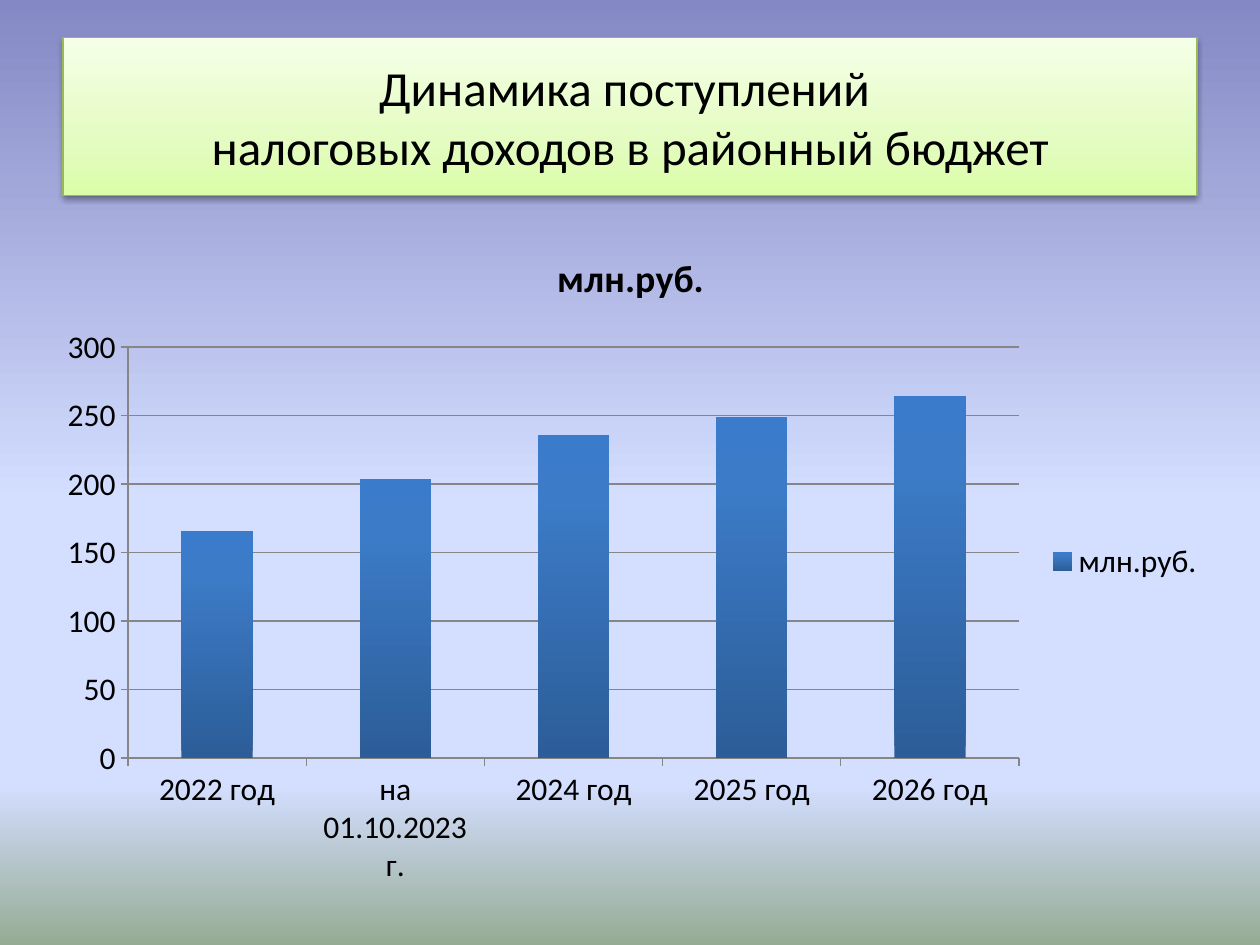
from lxml import etree
from pptx import Presentation
from pptx import util as u
from pptx.chart import data
from pptx.dml import color
from pptx.enum import chart as ch, shapes, text
from pptx.oxml import ns

TITLE = "Динамика поступлений \vналоговых доходов в районный бюджет"
UNIT = "млн.руб."
REVENUE = {
    "2022 год": 166,
    "на 01.10.2023 г.": 204,
    "2024 год": 236,
    "2025 год": 249,
    "2026 год": 264,
}
BOXES = {"title": (1.27, 0.76, 22.86, 3.18), "chart": (0.89, 4.52, 23.65, 13.59)}
THEME = {
    "font": "Calibri",
    "text": "000000",
    "grid": "868686",
    "border": "98B955",
    "title_size": 28,
    "chart_size": 18,
    "unit_size": 21.6,
    "background": ([(0, "8488C4"), (53, "D4DEFF"), (83, "D4DEFF"), (100, "96AB94")], 270),
    "banner": ([(0, "DAFDA7"), (35, "E4FCC2"), (100, "F5FFE7")], 90),
    "bars": ([(0, "2C5D98"), (80, "3C7BC7"), (100, "3A7CCB")], 90),
}


def rgb(name):
    return color.RGBColor.from_string(THEME[name])


def set_font(font, size, **extra):
    font.color.rgb = rgb("text")
    values = {"name": THEME["font"], "size": u.Pt(THEME[size]), **extra}
    for key, value in values.items():
        setattr(font, key, value)


def set_gradient(fill, root, name):
    stops, angle = THEME[name]
    fill.gradient()
    fill.gradient_angle = angle
    holder = next(root.iter(ns.qn("a:gsLst")))
    for old in list(holder):
        holder.remove(old)
    for pos, value in stops:
        gs = etree.SubElement(holder, ns.qn("a:gs"), pos=str(pos * 1000))
        etree.SubElement(gs, ns.qn("a:srgbClr"), val=value)


def add_shadow(sp):
    sp.shadow.inherit = False
    effects = next(sp.element.iter(ns.qn("a:effectLst")))
    shadow = etree.SubElement(
        effects, ns.qn("a:outerShdw"), blurRad=str(u.Pt(3.1)),
        dist=str(u.Pt(1.6)), dir="5400000", rotWithShape="0",
    )
    tint = etree.SubElement(shadow, ns.qn("a:srgbClr"), val=THEME["text"])
    etree.SubElement(tint, ns.qn("a:alpha"), val="38000")


def add_banner(s):
    sp = s.shapes.add_shape(shapes.MSO_SHAPE.RECTANGLE, *map(u.Cm, BOXES["title"]))
    set_gradient(sp.fill, sp.element, "banner")
    sp.line.color.rgb = rgb("border")
    sp.line.width = u.Pt(0.75)
    add_shadow(sp)
    tf = sp.text_frame
    tf.word_wrap = True
    tf.vertical_anchor = text.MSO_ANCHOR.MIDDLE
    p = tf.paragraphs[0]
    p.text = TITLE
    p.alignment = text.PP_ALIGN.CENTER
    for r in p.runs:
        set_font(r.font, "title_size")


def add_revenue_chart(s):
    cd = data.CategoryChartData()
    cd.categories = list(REVENUE)
    cd.add_series(UNIT, list(REVENUE.values()))
    chart = s.shapes.add_chart(
        ch.XL_CHART_TYPE.COLUMN_CLUSTERED, *map(u.Cm, BOXES["chart"]), cd
    ).chart
    set_font(chart.font, "chart_size")

    chart.has_title = True
    tf = chart.chart_title.text_frame
    tf.text = UNIT
    set_font(tf.paragraphs[0].runs[0].font, "unit_size", bold=True)

    chart.has_legend = True
    chart.legend.position = ch.XL_LEGEND_POSITION.RIGHT
    chart.legend.include_in_layout = False

    plot = chart.plots[0]
    plot.gap_width = 150
    plot.vary_by_categories = False
    set_gradient(plot.series[0].format.fill, chart.element, "bars")

    axis = chart.value_axis
    scale = {"minimum_scale": 0, "maximum_scale": 300, "major_unit": 50,
             "has_major_gridlines": True}
    for key, value in scale.items():
        setattr(axis, key, value)
    for part in (axis, axis.major_gridlines, chart.category_axis):
        part.format.line.color.rgb = rgb("grid")
        part.format.line.width = u.Pt(0.75)


def main():
    """Build the slide on tax revenue of the district budget."""
    prs = Presentation()
    prs.slide_width, prs.slide_height = u.Cm(25.4), u.Cm(19.05)
    s = prs.slides.add_slide(prs.slide_layouts[6])
    set_gradient(s.background.fill, s.element, "background")
    add_banner(s)
    add_revenue_chart(s)
    prs.save("out.pptx")


if __name__ == "__main__":
    main()
